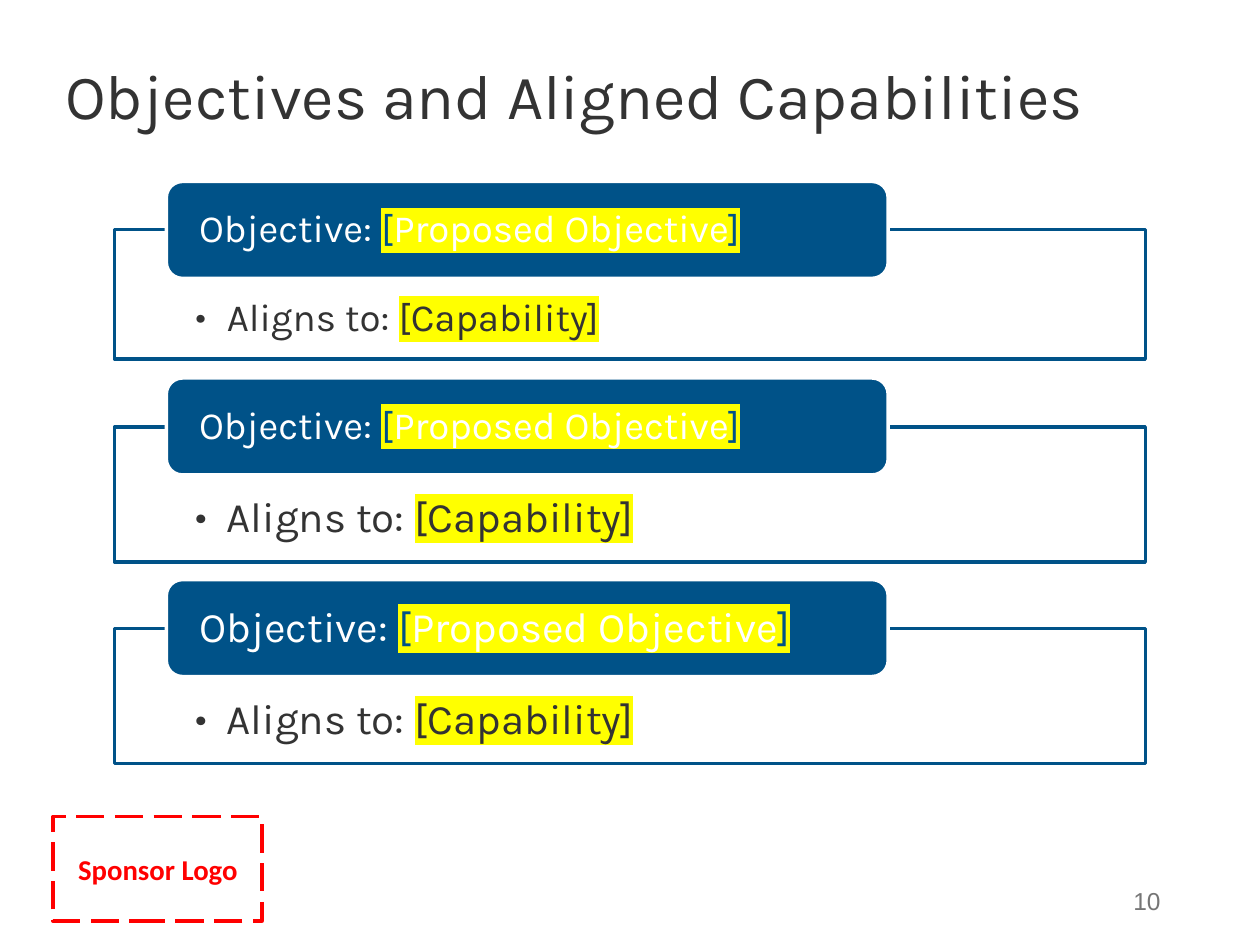
from dataclasses import dataclass
from typing import NamedTuple, Optional

from lxml import etree
from pptx import Presentation
from pptx.dml.color import RGBColor
from pptx.enum.dml import MSO_LINE
from pptx.enum.shapes import MSO_SHAPE
from pptx.enum.text import MSO_ANCHOR, PP_ALIGN
from pptx.oxml.ns import qn
from pptx.util import Emu, Pt

PX_PER_INCH = 100
EMU_PER_PX = 914400 // PX_PER_INCH

BLUE = RGBColor(0x00, 0x52, 0x88)
INK = RGBColor(0x33, 0x33, 0x33)
GRAY = RGBColor(0x76, 0x76, 0x76)
RED = RGBColor(0xFF, 0x00, 0x00)
WHITE = RGBColor(0xFF, 0xFF, 0xFF)
YELLOW = RGBColor(0xFF, 0xFF, 0x00)

RECT = MSO_SHAPE.RECTANGLE
ROUNDED = MSO_SHAPE.ROUNDED_RECTANGLE
LONG_DASH = MSO_LINE.LONG_DASH
TOP = MSO_ANCHOR.TOP
MIDDLE = MSO_ANCHOR.MIDDLE
LEFT = PP_ALIGN.LEFT
RIGHT = PP_ALIGN.RIGHT


class Box(NamedTuple):
    left: int
    top: int
    width: int
    height: int


class Insets(NamedTuple):
    left: int
    top: int
    right: int
    bottom: int


class Piece(NamedTuple):
    text: str
    color: RGBColor
    highlight: Optional[RGBColor] = None


@dataclass(frozen=True)
class TextStyle:
    size: float
    face: str = "Karla"
    bold: bool = False
    align: int = LEFT
    anchor: int = MIDDLE
    insets: Insets = Insets(10, 5, 10, 5)
    line_spacing: float = 1.0
    bulleted: bool = False


@dataclass(frozen=True)
class Objective:
    heading_top: int
    panel_top: int
    panel_height: int
    heading_size: int
    capability_size: int


OBJECTIVES = (
    Objective(144, 182, 103, 22, 22),
    Objective(300, 339, 107, 22, 24),
    Objective(460, 499, 107, 24, 24),
)
HEADING = (
    Piece("Objective: ", WHITE),
    Piece("[", BLUE, YELLOW),
    Piece("Proposed Objective", WHITE, YELLOW),
    Piece("]", BLUE, YELLOW),
)
CAPABILITY = (Piece("Aligns to: ", INK), Piece("[Capability]", INK, YELLOW))
NO_INSETS = Insets(0, 0, 0, 0)
CAPABILITY_DROP = 55


def px(length: int) -> Emu:
    return Emu(length * EMU_PER_PX)


def set_all(target, values: dict) -> None:
    for attribute, value in values.items():
        setattr(target, attribute, value)


def add_label(slide, box: Box, pieces: tuple, style: TextStyle) -> None:
    frame = slide.shapes.add_textbox(*map(px, box)).text_frame
    set_all(frame, {"word_wrap": True, "vertical_anchor": style.anchor})
    set_all(frame, {f"margin_{side}": px(inset)
                    for side, inset in style.insets._asdict().items()})
    paragraph = frame.paragraphs[0]
    set_all(paragraph, {"alignment": style.align, "line_spacing": style.line_spacing})
    if style.bulleted:
        properties = paragraph._p.get_or_add_pPr()
        properties.set("marL", str(px(25)))
        properties.set("indent", str(px(-25)))
        etree.SubElement(properties, qn("a:buFont")).set("typeface", style.face)
        etree.SubElement(properties, qn("a:buChar")).set("char", "•")
    for piece in pieces:
        run = paragraph.add_run()
        run.text = piece.text
        set_all(run.font, {"size": Pt(style.size), "name": style.face, "bold": style.bold})
        run.font.color.rgb = piece.color
        if piece.highlight is not None:
            highlight = etree.Element(qn("a:highlight"))
            etree.SubElement(highlight, qn("a:srgbClr")).set("val", str(piece.highlight))
            run._r.rPr.find(qn("a:solidFill")).addnext(highlight)


def add_block(slide, preset: int, box: Box, fill: Optional[RGBColor],
              outline: RGBColor, opacity: int = 100):
    block = slide.shapes.add_shape(preset, *map(px, box))
    block.shadow.inherit = False
    if fill is None:
        block.fill.background()
    else:
        block.fill.solid()
        block.fill.fore_color.rgb = fill
        if opacity < 100:
            color = block._element.spPr.find(qn("a:solidFill"))[0]
            etree.SubElement(color, qn("a:alpha")).set("val", str(opacity * 1000))
    block.line.color.rgb = outline
    block.line.width = Pt(2)
    return block


def add_objective(slide, objective: Objective) -> None:
    panel = Box(91, objective.panel_top, 818, objective.panel_height)
    add_block(slide, RECT, panel, WHITE, BLUE, opacity=90)
    capability = Box(155, panel.top + CAPABILITY_DROP, 690, panel.height - CAPABILITY_DROP)
    add_label(slide, capability, CAPABILITY, TextStyle(
        objective.capability_size, anchor=TOP, insets=NO_INSETS,
        line_spacing=0.9, bulleted=True))
    add_block(slide, ROUNDED, Box(132, objective.heading_top, 573, 77), BLUE, WHITE)
    add_label(slide, Box(136, objective.heading_top + 4, 565, 70), HEADING, TextStyle(
        objective.heading_size, insets=Insets(22, 0, 22, 0), line_spacing=0.9))


def main() -> None:
    deck = Presentation()
    set_all(deck, {"slide_width": px(1000), "slide_height": px(750)})
    slide = deck.slides.add_slide(deck.slide_layouts[6])

    sponsor_frame = add_block(slide, RECT, Box(42, 648, 166, 83), None, RED)
    sponsor_frame.line.dash_style = LONG_DASH
    add_label(slide, Box(62, 676, 143, 28), (Piece("Sponsor Logo", RED),),
              TextStyle(16.4, "Calibri", bold=True, anchor=TOP, insets=NO_INSETS))
    add_label(slide, Box(42, 20, 890, 109),
              (Piece("Objectives and Aligned Capabilities", INK),), TextStyle(36))
    for objective in OBJECTIVES:
        add_objective(slide, objective)
    add_label(slide, Box(706, 695, 225, 40), (Piece("10", GRAY),),
              TextStyle(14, "Arial", align=RIGHT))

    deck.save("out.pptx")


if __name__ == "__main__":
    main()
